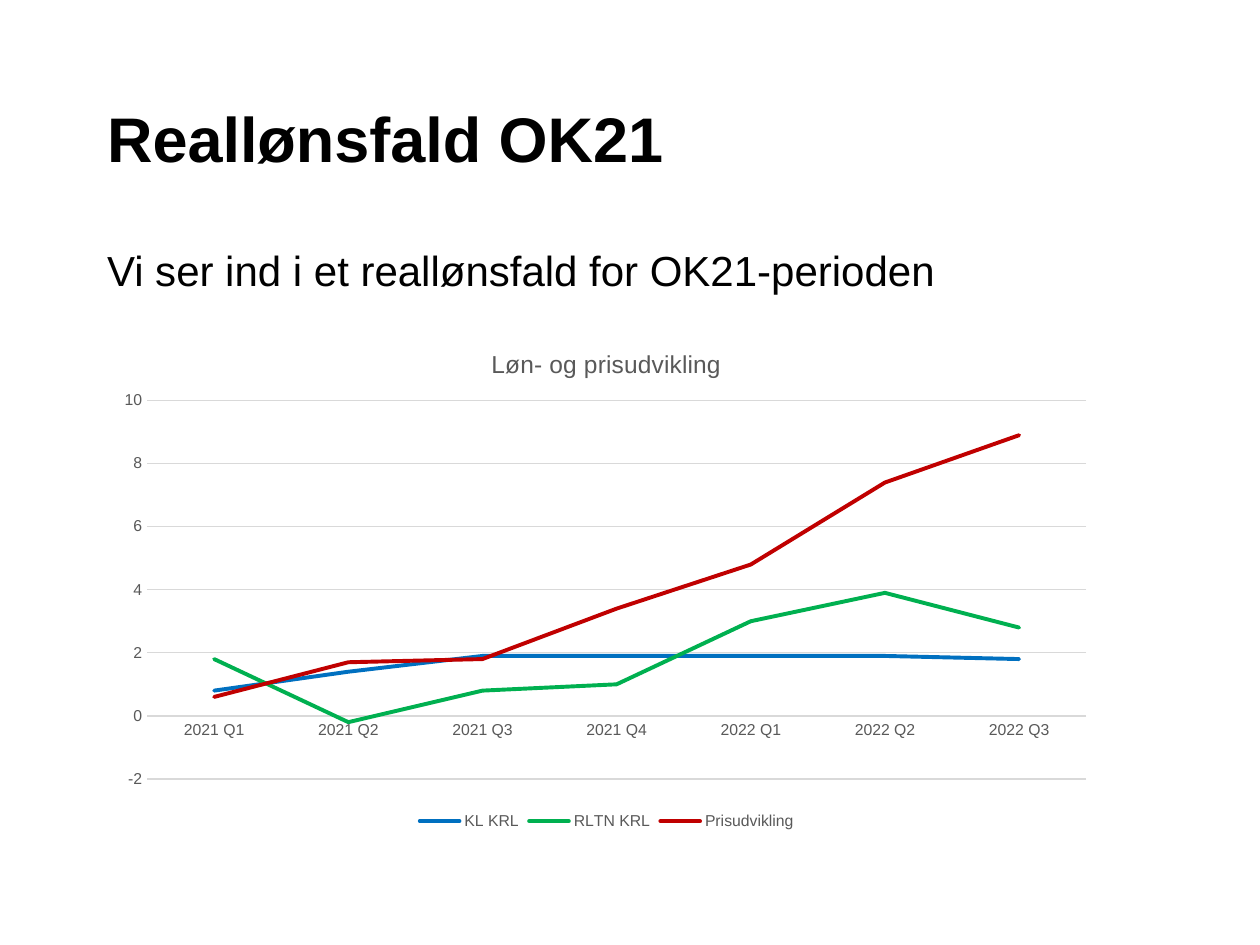
from dataclasses import dataclass

import pptx
import pptx.chart.data
import pptx.dml.color
import pptx.enum.chart
import pptx.oxml
import pptx.oxml.ns
import pptx.util

Inches = pptx.util.Inches
Pt = pptx.util.Pt


@dataclass(frozen=True)
class Theme:
    font: str = "Arial"
    text: str = "000000"
    muted: str = "595959"
    grid: str = "D9D9D9"
    title_size: float = 36
    body_size: float = 24
    chart_title_size: float = 14
    label_size: float = 9
    hairline: float = 0.75
    series_width: float = 2.25


QUARTERS = ["2021 Q1", "2021 Q2", "2021 Q3", "2021 Q4", "2022 Q1", "2022 Q2", "2022 Q3"]
SERIES = [
    ("KL KRL", "0070C0", [0.8, 1.4, 1.9, 1.9, 1.9, 1.9, 1.8]),
    ("RLTN KRL", "00B050", [1.8, -0.2, 0.8, 1, 3, 3.9, 2.8]),
    ("Prisudvikling", "C00000", [0.6, 1.7, 1.8, 3.4, 4.8, 7.4, 8.9]),
]


def rgb(value):
    return pptx.dml.color.RGBColor.from_string(value)


def place_in_chart(element, index, **fractions):
    """Give a chart part a manual layout, in fractions of the chart."""
    for layout in element.findall(pptx.oxml.ns.qn("c:layout")):
        element.remove(layout)
    target = '<c:layoutTarget val="inner"/>' if "w" in fractions else ""
    modes = "".join(f'<c:{key}Mode val="edge"/>' for key in "xy")
    values = "".join(f'<c:{key} val="{value}"/>' for key, value in fractions.items())
    element.insert(index, pptx.oxml.parse_xml(
        f'<c:layout {pptx.oxml.ns.nsdecls("c")}><c:manualLayout>'
        f"{target}{modes}{values}</c:manualLayout></c:layout>"))


class SlideBuilder:
    def __init__(self, slide, theme):
        self.slide = slide
        self.theme = theme

    def style_font(self, font, size, color, bold=False):
        font.name = self.theme.font
        font.size = Pt(size)
        font.bold = bold
        font.color.rgb = rgb(color)

    def style_line(self, line, color, width):
        line.color.rgb = rgb(color)
        line.width = Pt(width)

    def text(self, wording, left, top, width, height, size, bold=False):
        box = self.slide.shapes.add_textbox(
            Inches(left), Inches(top), Inches(width), Inches(height))
        frame = box.text_frame
        frame.word_wrap = True
        frame.margin_left = frame.margin_right = frame.margin_bottom = 0
        frame.margin_top = Inches(0.04)
        paragraph = frame.paragraphs[0]
        paragraph.text = wording
        self.style_font(paragraph.font, size, self.theme.text, bold)

    def line_chart(self, title, categories, series, left, top, width, height):
        data = pptx.chart.data.CategoryChartData()
        data.categories = categories
        for name, _, values in series:
            data.add_series(name, values)
        chart = self.slide.shapes.add_chart(
            pptx.enum.chart.XL_CHART_TYPE.LINE, Inches(left), Inches(top),
            Inches(width), Inches(height), data).chart
        theme = self.theme
        self.style_font(chart.font, theme.label_size, theme.muted)

        heading = chart.chart_title.text_frame.paragraphs[0]
        heading.text = title
        self.style_font(heading.font, theme.chart_title_size, theme.muted)
        place_in_chart(chart.chart_title._element, 1, x=0.38, y=0.04)
        place_in_chart(chart.plots[0]._element.getparent(), 0,
                       x=0.04, y=0.15, w=0.94, h=0.74)

        chart.has_legend = True
        chart.legend.position = pptx.enum.chart.XL_LEGEND_POSITION.BOTTOM
        chart.legend.include_in_layout = False
        self.style_font(chart.legend.font, theme.label_size, theme.muted)
        self.axes(chart)

        for line, (_, color, _) in zip(chart.plots[0].series, series):
            line.smooth = False
            line.marker.style = pptx.enum.chart.XL_MARKER_STYLE.NONE
            self.style_line(line.format.line, color, theme.series_width)
            line.format.line._get_or_add_ln().set("cap", "rnd")

    def axes(self, chart):
        theme = self.theme
        quarters, percent = chart.category_axis, chart.value_axis
        for axis in (quarters, percent):
            axis.major_tick_mark = pptx.enum.chart.XL_TICK_MARK.NONE
            axis.minor_tick_mark = pptx.enum.chart.XL_TICK_MARK.NONE
            self.style_font(axis.tick_labels.font, theme.label_size, theme.muted)
        self.style_line(quarters.format.line, theme.grid, theme.hairline)
        percent.format.line.fill.background()
        percent.minimum_scale, percent.maximum_scale, percent.major_unit = -2, 10, 2
        percent.has_major_gridlines = True
        self.style_line(percent.major_gridlines.format.line, theme.grid, theme.hairline)


def main():
    deck = pptx.Presentation()
    deck.slide_width, deck.slide_height = Inches(10), Inches(7.5)
    theme = Theme()
    builder = SlideBuilder(deck.slides.add_slide(deck.slide_layouts[6]), theme)
    margin = 0.85
    builder.text("Reallønsfald OK21", margin, 0.75, 7.57, 0.93, theme.title_size, bold=True)
    builder.text("Vi ser ind i et reallønsfald for OK21-perioden",
                 margin, 1.9, 8.27, 4.5, theme.body_size)
    builder.line_chart("Løn- og prisudvikling", QUARTERS, SERIES, margin, 2.57, 7.93, 4.06)
    deck.save("out.pptx")


if __name__ == "__main__":
    main()
